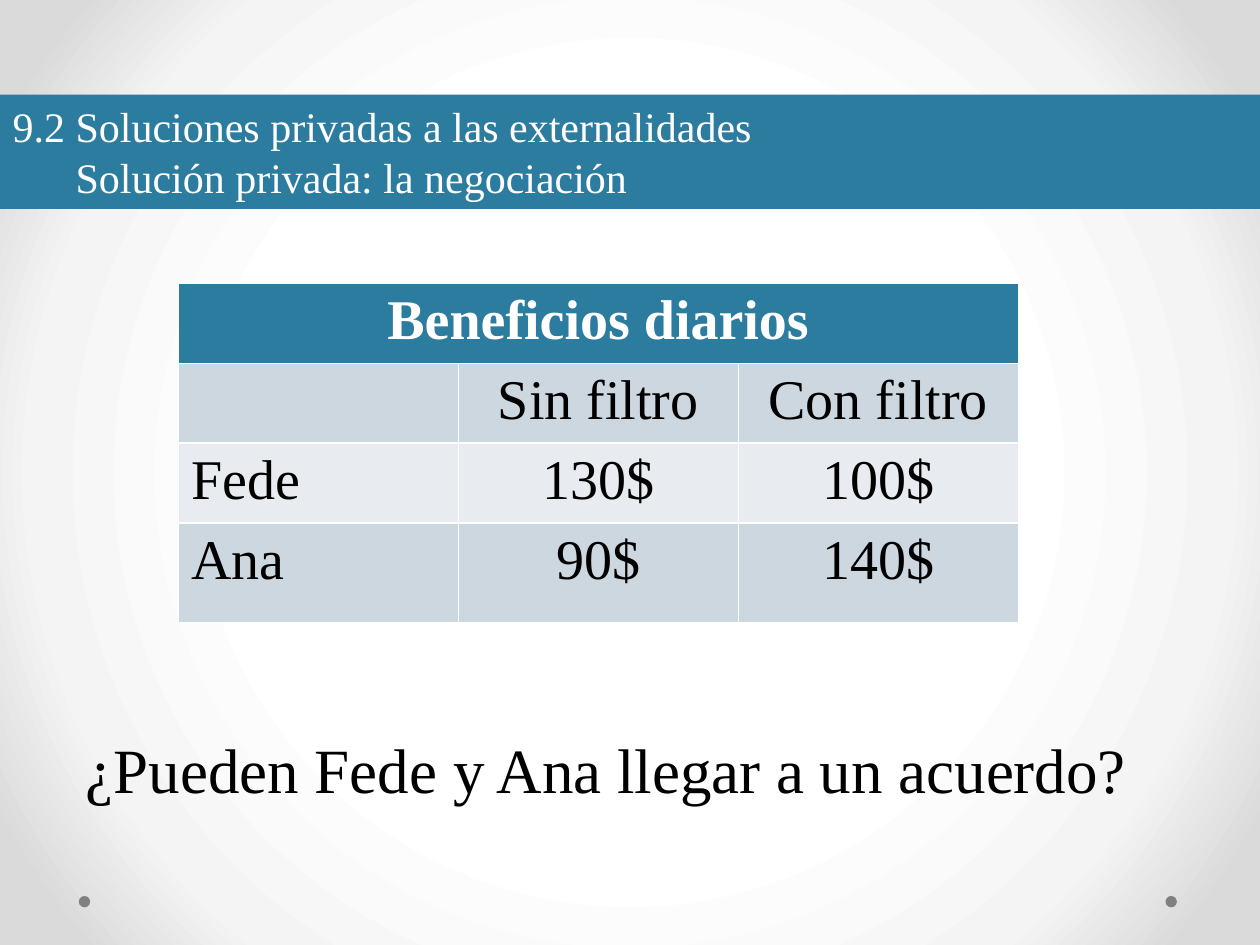
from pptx import Presentation
from pptx.dml.color import RGBColor
from pptx.enum.shapes import MSO_SHAPE
from pptx.enum.text import MSO_ANCHOR, MSO_AUTO_SIZE, PP_ALIGN
from pptx.oxml import parse_xml
from pptx.oxml.ns import nsdecls, qn
from pptx.util import Pt

OVAL = MSO_SHAPE.OVAL
TOP = MSO_ANCHOR.TOP
FIXED = MSO_AUTO_SIZE.NONE
LEFT, CENTER = PP_ALIGN.LEFT, PP_ALIGN.CENTER

WHITE = RGBColor(0xFF, 0xFF, 0xFF)
BLACK = RGBColor(0, 0, 0)
BLUE = RGBColor(0x2C, 0x7C, 0x9F)
DARK = RGBColor(0xCD, 0xD7, 0xDF)
PALE = RGBColor(0xE8, 0xEC, 0xF0)
GREY = RGBColor(0x80, 0x80, 0x80)
STOPS = [(50, WHITE), (76, RGBColor(0xF4, 0xF4, 0xF4)), (92, RGBColor(0xDA, 0xDA, 0xDA))]

FACE = "Times New Roman"
HEAD = ["9.2 Soluciones privadas a las externalidades", "\tSolución privada: la negociación"]
ROWS = [
    ["Beneficios diarios", "", ""],
    ["", "Sin filtro", "Con filtro"],
    ["Fede", "130$", "100$"],
    ["Ana", "90$", "140$"],
]
HIGH = [45.6, 45.6, 45.6, 56.9]


def place(shape, left, top, width, height):
    box = {"left": left, "top": top, "width": width, "height": height}
    for name, value in box.items():
        setattr(shape, name, Pt(value))


def write(frame, lines, size, color, align=LEFT, bold=False):
    form = {"name": FACE, "size": Pt(size), "bold": bold}
    for index, line in enumerate(lines):
        para = frame.add_paragraph() if index else frame.paragraphs[0]
        para.alignment = align
        run = para.add_run()
        run.text = line
        for name, value in form.items():
            setattr(run.font, name, value)
        run.font.color.rgb = color


def paint(shape, color):
    shape.fill.solid()
    shape.fill.fore_color.rgb = color


def add_back(slide):
    slide.background.fill.gradient()
    old = slide.element.find(".//" + qn("a:gradFill"))
    stops = "".join(
        f'<a:gs pos="{pos * 1000}"><a:srgbClr val="{color}"/></a:gs>' for pos, color in STOPS
    )
    new = parse_xml(
        f'<a:gradFill {nsdecls("a")} rotWithShape="1"><a:gsLst>{stops}</a:gsLst>'
        '<a:path path="circle"><a:fillToRect l="50000" t="50000" r="50000" b="50000"/>'
        "</a:path></a:gradFill>"
    )
    old.getparent().replace(old, new)


def add_dot(slide, left):
    dot = slide.shapes.add_shape(OVAL, Pt(left), Pt(512), Pt(6.5), Pt(6.5))
    dot.shadow.inherit = False
    paint(dot, GREY)
    dot.line.fill.background()


def add_title(slide):
    title = slide.shapes.title
    place(title, 0, 54, 720, 65.4)
    paint(title, BLUE)
    form = {"word_wrap": True, "auto_size": FIXED, "vertical_anchor": TOP}
    for name, value in form.items():
        setattr(title.text_frame, name, value)
    write(title.text_frame, HEAD, 24, WHITE)


def add_grid(slide):
    frame = slide.shapes.add_table(len(ROWS), 3, Pt(102), Pt(162), Pt(480), Pt(sum(HIGH)))
    table = frame.table
    table.cell(0, 0).merge(table.cell(0, 2))
    for r, texts in enumerate(ROWS):
        table.rows[r].height = Pt(HIGH[r])
        top = r == 0
        for c, text in enumerate(texts):
            cell = table.cell(r, c)
            paint(cell, BLUE if top else DARK if r % 2 else PALE)
            if text:
                align = CENTER if top or c else LEFT
                write(cell.text_frame, [text], 32, WHITE if top else BLACK, align, top)


def add_query(slide):
    box = slide.shapes.add_textbox(Pt(42), Pt(414), Pt(636), Pt(51))
    box.text_frame.word_wrap = True
    write(box.text_frame, ["¿Pueden Fede y Ana llegar a un acuerdo?"], 36, BLACK)


def main():
    deck = Presentation()
    deck.slide_width, deck.slide_height = Pt(720), Pt(540)
    slide = deck.slides.add_slide(deck.slide_layouts[5])
    add_back(slide)
    for left in (45, 666):
        add_dot(slide, left)
    add_title(slide)
    add_grid(slide)
    add_query(slide)
    deck.save("out.pptx")


if __name__ == "__main__":
    main()
